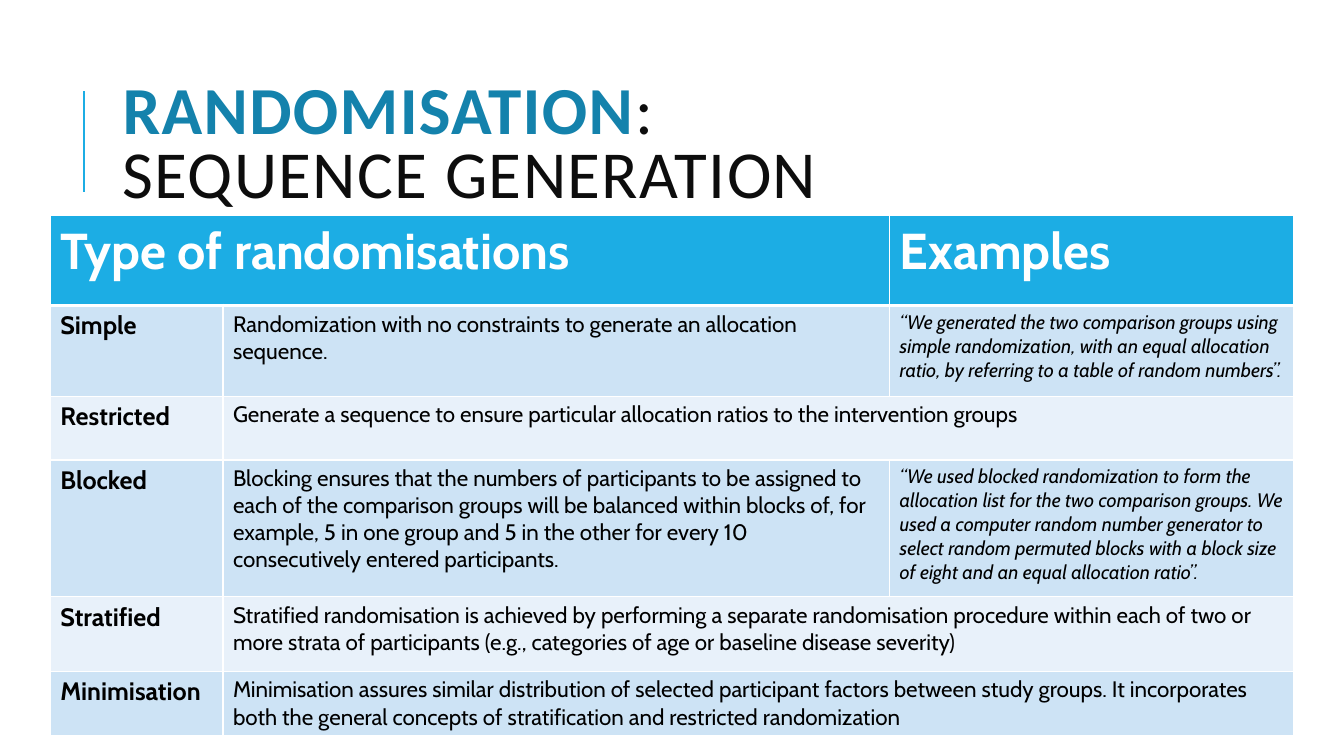
from lxml import etree
from pptx import Presentation
from pptx.dml.color import RGBColor
from pptx.enum.shapes import MSO_CONNECTOR
from pptx.enum.text import MSO_ANCHOR
from pptx.oxml.ns import qn
from pptx.util import Cm, Pt

STRAIGHT = MSO_CONNECTOR.STRAIGHT
MIDDLE = MSO_ANCHOR.MIDDLE


class Theme:
    accent = "1CADE4"
    strong = "1482AC"
    ink = "0D0D0D"
    black = "000000"
    white = "FFFFFF"
    bands = ["CDE3F5", "E8F1FA"]
    title_font = "Calibri"
    body_font = "Cabin"
    title = 48
    head = 36
    label = 18
    body = 16
    quote = 14


def add_run(para, text, font, size, color, bold=False, italic=False):
    run = para.add_run()
    run.text = text
    run.font.name = font
    run.font.size = Pt(size)
    run.font.color.rgb = RGBColor.from_string(color)
    run.font.bold = bold
    run.font.italic = italic
    return run


def paint_cell(cell, color, top, bottom):
    props = cell._tc.get_or_add_tcPr()
    for side, width in (("L", 1), ("R", 1), ("T", top), ("B", bottom)):
        edge = etree.SubElement(props, qn("a:ln" + side), w=str(Pt(width)))
        fill = etree.SubElement(edge, qn("a:solidFill"))
        etree.SubElement(fill, qn("a:srgbClr"), val=Theme.white)
    cell.fill.solid()
    cell.fill.fore_color.rgb = RGBColor.from_string(color)


deck = Presentation()
deck.slide_width = Cm(33.87)
deck.slide_height = Cm(19.05)
slide = deck.slides.add_slide(deck.slide_layouts[6])

rule = slide.shapes.add_connector(STRAIGHT, Cm(2.12), Cm(4.83), Cm(2.12), Cm(2.29))
rule.line.color.rgb = RGBColor.from_string(Theme.accent)
rule.line.width = Pt(1.5)
etree.SubElement(rule._element.spPr, qn("a:effectLst"))

title = slide.shapes.add_textbox(Cm(2.84), Cm(1.63), Cm(27), Cm(4.17))
frame = title.text_frame
frame.word_wrap = True
frame.vertical_anchor = MIDDLE
para = frame.paragraphs[0]
para.line_spacing = 0.8
for text, color, bold in (
    ("RANDOMISATION", Theme.strong, True),
    (":", Theme.ink, False),
    ("SEQUENCE GENERATION", Theme.ink, False),
):
    if text.startswith("SEQUENCE"):
        para.add_line_break()
    run = add_run(para, text, Theme.title_font, Theme.title, color, bold)
    run._r.get_or_add_rPr().set("spc", "100")

methods = [
    ("Simple",
     "Randomization with no constraints to generate an allocation sequence.",
     "“We generated the two comparison groups using simple randomization, with an equal "
     "allocation ratio, by referring to a table of random numbers”."),
    ("Restricted",
     "Generate a sequence to ensure particular allocation ratios to the intervention groups",
     ""),
    ("Blocked",
     "Blocking ensures that the numbers of participants to be assigned to each of the "
     "comparison groups will be balanced within blocks of, for example, 5 in one group and "
     "5 in the other for every 10 consecutively entered participants.",
     "“We used blocked randomization to form the allocation list for the two comparison "
     "groups. We used a computer random number generator to select random permuted blocks "
     "with a block size of eight and an equal allocation ratio”."),
    ("Stratified",
     "Stratified randomisation is achieved by performing a separate randomisation procedure "
     "within each of two or more strata of participants (e.g., categories of age or baseline "
     "disease severity)",
     ""),
    ("Minimisation",
     "Minimisation assures similar distribution of selected participant factors between "
     "study groups. It incorporates both the general concepts of stratification and "
     "restricted randomization",
     ""),
]
widths = [4.35, 16.8, 10.17]
heights = [2.26, 2.29, 1.6, 3.45, 1.88, 1.6]
table = slide.shapes.add_table(
    len(heights), len(widths), Cm(1.27), Cm(5.44), Cm(sum(widths)), Cm(sum(heights))
).table
for col, width in zip(table.columns, widths):
    col.width = Cm(width)
for row, height in zip(table.rows, heights):
    row.height = Cm(height)

for col, text in enumerate(("Type of randomisations", "", "Examples")):
    cell = table.cell(0, col)
    paint_cell(cell, Theme.accent, 1, 3)
    if text:
        add_run(cell.text_frame.paragraphs[0], text, Theme.body_font, Theme.head,
                Theme.white, True)
table.cell(0, 0).merge(table.cell(0, 1))

sizes = [Theme.label, Theme.body, Theme.quote]
for row, method in enumerate(methods, 1):
    for col, text in enumerate(method):
        cell = table.cell(row, col)
        paint_cell(cell, Theme.bands[(row - 1) % 2], 3 if row == 1 else 1, 1)
        if text:
            add_run(cell.text_frame.paragraphs[0], text, Theme.body_font, sizes[col],
                    Theme.black, col == 0, col == 2)
    if not method[2]:
        table.cell(row, 1).merge(table.cell(row, 2))

deck.save("out.pptx")
